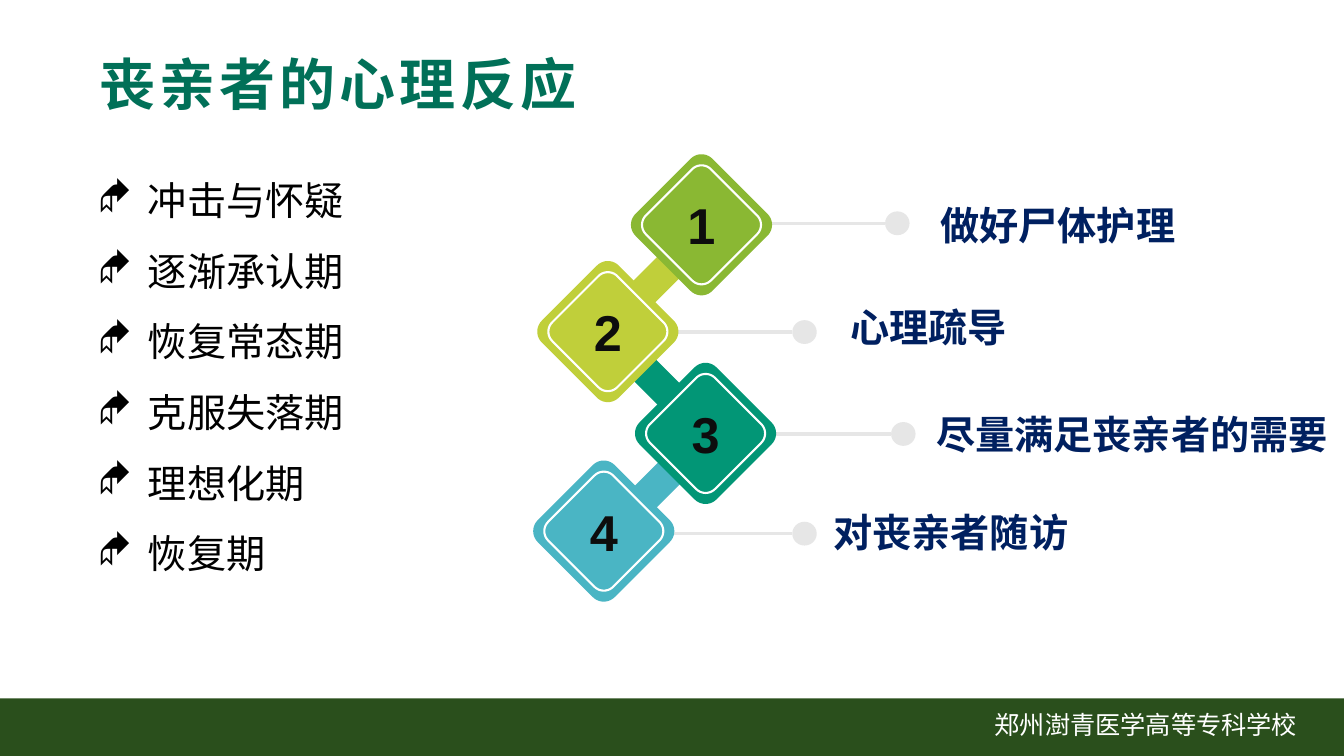
from dataclasses import dataclass
from math import cos, radians, sin

from lxml import etree
from pptx import Presentation
from pptx.dml.color import RGBColor
from pptx.enum import shapes, text
from pptx.oxml.ns import qn
from pptx.util import Pt

CJK = "Noto Sans CJK SC"
LATIN = "Arial"
WHITE = RGBColor(0xFF, 0xFF, 0xFF)
BLACK = RGBColor(0x00, 0x00, 0x00)
INK = RGBColor(0x0D, 0x0D, 0x0D)
NAVY = RGBColor(0x00, 0x20, 0x60)
TITLE_GREEN = RGBColor(0x01, 0x70, 0x58)
FOOTER_GREEN = RGBColor(0x2A, 0x4F, 0x1C)
GREY = RGBColor(0xE6, 0xE6, 0xE6)
GREEN = RGBColor(0x8A, 0xB8, 0x33)
LIME = RGBColor(0xC0, 0xCF, 0x3A)
TEAL = RGBColor(0x02, 0x96, 0x76)
BLUE = RGBColor(0x4A, 0xB5, 0xC4)

LEADER_LENGTH = 96.5
DOT_WIDTH, DOT_HEIGHT = 17.5, 17
LABEL_HEIGHT = 41
BAR_LENGTH, BAR_WIDTH = 72, 22


@dataclass
class Step:
    label: str
    color: RGBColor
    x: float
    y: float
    leader_x: float
    leader_y: float
    label_x: float
    label_y: float
    label_width: float


@dataclass
class Bar:
    x: float
    y: float
    angle: float
    color: RGBColor


STAGES = ["冲击与怀疑", "逐渐承认期", "恢复常态期", "克服失落期", "理想化期", "恢复期"]
STEPS = [
    Step("做好尸体护理", GREEN, 501.1, 160.6, 535.7, 159.5, 664.6, 140.4, 185),
    Step("心理疏导", LIME, 434.2, 236.9, 469.4, 237.2, 600.5, 213.1, 128),
    Step("尽量满足丧亲者的需要", TEAL, 504, 309.6, 540, 310, 661.7, 289.4, 298.8),
    Step("对丧亲者随访", BLUE, 431.3, 379.4, 469.4, 381.2, 588.2, 359.3, 185),
]
BARS = [
    Bar(468, 348.1, -45, BLUE),
    Bar(464.8, 268.6, 45, TEAL),
    Bar(473.8, 194.8, -45, LIME),
]


def write(p, content: str, *, size: float, color: RGBColor, font: str = CJK,
          bold: bool = False, align=text.PP_ALIGN.LEFT, spacing: float = 0) -> None:
    p.alignment = align
    r = p.add_run()
    r.text = content
    r.font.size = Pt(size)
    r.font.bold = bold
    r.font.color.rgb = color
    r.font.name = font
    rPr = r._r.get_or_add_rPr()
    etree.SubElement(rPr, qn("a:ea")).set("typeface", CJK)
    if spacing:
        rPr.set("spc", str(int(spacing * 100)))


def text_frame(slide, x: float, y: float, w: float, h: float, wrap: bool):
    tf = slide.shapes.add_textbox(Pt(x), Pt(y), Pt(w), Pt(h)).text_frame
    tf.word_wrap = wrap
    return tf


def paint(sp, color: RGBColor) -> None:
    sp.shadow.inherit = False
    sp.fill.solid()
    sp.fill.fore_color.rgb = color
    sp.line.fill.background()


def block(slide, kind, x: float, y: float, w: float, h: float, color: RGBColor):
    sp = slide.shapes.add_shape(kind, Pt(x), Pt(y), Pt(w), Pt(h))
    paint(sp, color)
    return sp


def diamond(slide, x: float, y: float, half: float, radius: float):
    reach = half - radius
    points = []
    for corner in range(0, 360, 90):
        cx = x + reach * cos(radians(corner))
        cy = y + reach * sin(radians(corner))
        for turn in range(corner - 45, corner + 46, 9):
            points.append((Pt(cx + radius * cos(radians(turn))),
                           Pt(cy + radius * sin(radians(turn)))))
    outline = slide.shapes.build_freeform(*points[0])
    outline.add_line_segments(points[1:], close=True)
    return outline.convert_to_shape()


def draw_leader(slide, step: Step) -> None:
    end = step.leader_x + LEADER_LENGTH
    line = slide.shapes.add_connector(
        shapes.MSO_CONNECTOR.STRAIGHT,
        Pt(step.leader_x), Pt(step.leader_y), Pt(end), Pt(step.leader_y))
    line.line.color.rgb = GREY
    line.line.width = Pt(2.25)
    etree.SubElement(line._element.spPr, qn("a:effectLst"))
    block(slide, shapes.MSO_SHAPE.OVAL, end, step.leader_y - DOT_HEIGHT / 2,
          DOT_WIDTH, DOT_HEIGHT, GREY)


def draw_bar(slide, bar: Bar) -> None:
    sp = block(slide, shapes.MSO_SHAPE.ROUNDED_RECTANGLE, bar.x - BAR_LENGTH / 2,
               bar.y - BAR_WIDTH / 2, BAR_LENGTH, BAR_WIDTH, bar.color)
    sp.adjustments[0] = 0.4
    sp.rotation = bar.angle


def draw_step(slide, number: int, step: Step) -> None:
    sp = diamond(slide, step.x, step.y, 50.4, 11)
    paint(sp, step.color)
    tf = sp.text_frame
    tf.vertical_anchor = text.MSO_ANCHOR.MIDDLE
    write(tf.paragraphs[0], str(number), size=36, color=INK, font=LATIN,
          bold=True, align=text.PP_ALIGN.CENTER)
    ring = diamond(slide, step.x, step.y, 42.5, 9.5)
    ring.shadow.inherit = False
    ring.fill.background()
    ring.line.color.rgb = WHITE
    ring.line.width = Pt(1.5)


def draw_label(slide, step: Step) -> None:
    tf = text_frame(slide, step.label_x, step.label_y, step.label_width,
                    LABEL_HEIGHT, wrap=False)
    write(tf.paragraphs[0], step.label, size=28, color=NAVY, bold=True)


def draw_title(slide) -> None:
    title = slide.shapes.title
    title.left, title.top, title.width, title.height = Pt(60.5), Pt(31.7), Pt(362), Pt(55.4)
    tf = title.text_frame
    tf.word_wrap = False
    tf.auto_size = text.MSO_AUTO_SIZE.NONE
    tf.vertical_anchor = text.MSO_ANCHOR.TOP
    write(tf.paragraphs[0], "丧亲者的心理反应", size=40, color=TITLE_GREEN, font=LATIN,
          bold=True, align=text.PP_ALIGN.CENTER, spacing=3)


def draw_stages(slide) -> None:
    tf = text_frame(slide, 62.6, 105.8, 229, 304.6, wrap=True)
    for i, stage in enumerate(STAGES):
        p = tf.add_paragraph() if i else tf.paragraphs[0]
        p.line_spacing = 1.5
        pPr = p._p.get_or_add_pPr()
        pPr.set("marL", str(Pt(36)))
        pPr.set("indent", str(-Pt(36)))
        etree.SubElement(pPr, qn("a:buFont")).set("typeface", "Wingdings")
        etree.SubElement(pPr, qn("a:buChar")).set("char", "◆")
        write(p, stage, size=28, color=BLACK)


def main() -> None:
    prs = Presentation()
    prs.slide_width, prs.slide_height = Pt(960), Pt(540)
    s = prs.slides.add_slide(prs.slide_layouts[5])
    block(s, shapes.MSO_SHAPE.RECTANGLE, 0, 498.8, 960, 41.2, FOOTER_GREEN)
    footer = text_frame(s, 703.4, 503.3, 234, 36.7, wrap=True)
    write(footer.paragraphs[0], "郑州澍青医学高等专科学校", size=18, color=WHITE)
    draw_title(s)
    draw_stages(s)
    for step in STEPS:
        draw_leader(s, step)
    for bar in BARS:
        draw_bar(s, bar)
    for number, step in enumerate(STEPS, start=1):
        draw_step(s, number, step)
        draw_label(s, step)
    prs.save("out.pptx")


if __name__ == "__main__":
    main()
